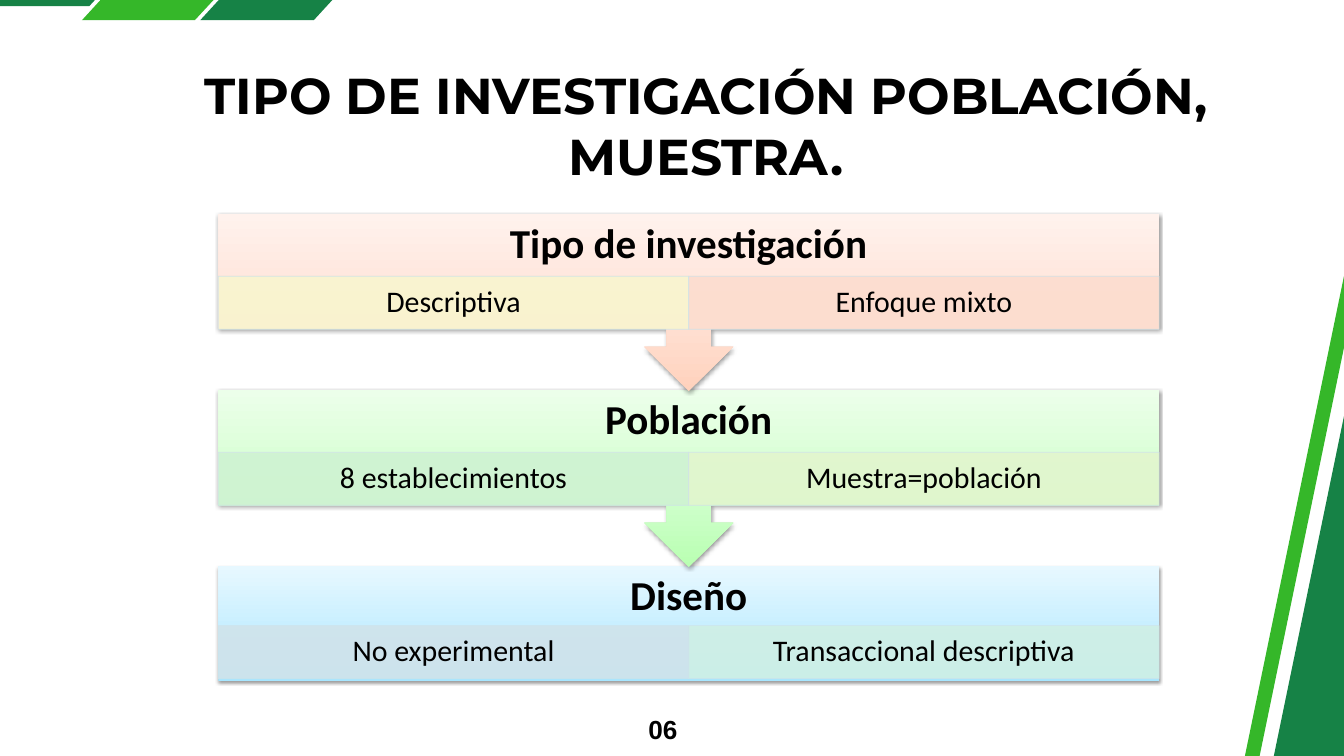
"""Build the slide on research type, population and design."""
from dataclasses import dataclass

from pptx import Presentation
from pptx.dml.color import RGBColor
from pptx.enum.shapes import MSO_SHAPE
from pptx.enum.text import MSO_ANCHOR, MSO_AUTO_SIZE, PP_ALIGN
from pptx.oxml import parse_xml
from pptx.oxml.ns import nsdecls
from pptx.util import Emu, Pt

PX = 9144
LEFT, WIDE, TOP, STEP = 325, 1400, 318, 262
HEAD, LOW = 93, 79
HUES = {"ink": "000000", "dark": "168246", "lime": "35B729", "edge": "D0E3EA"}
TITLE = {"name": "Montserrat", "size": Pt(54), "bold": True}
PAGE = {"name": "Arial", "size": Pt(28), "bold": True}
BAND = {"name": "Calibri", "size": Pt(44), "bold": True}
CELL = {"name": "Calibri", "size": Pt(32), "bold": False}


@dataclass(frozen=True)
class Box:
    """A place on the slide in px."""
    x: int
    y: int
    w: int
    h: int

    def emu(self) -> list[Emu]:
        """Return the four lengths in EMU."""
        return [Emu(v * PX) for v in (self.x, self.y, self.w, self.h)]


@dataclass(frozen=True)
class Stripe:
    """A slanted green band at the slide edge."""
    hue: str
    points: tuple


@dataclass(frozen=True)
class Stage:
    """A header with two cells below it."""
    head: str
    tones: tuple
    cells: tuple
    form: MSO_SHAPE = MSO_SHAPE.UP_ARROW_CALLOUT
    turn: int = 180
    high: int = 264
    drop: int = HEAD


STRIPES = (
    Stripe("dark", ((-179, -83), (217, -83), (133, 9), (-263, 9))),
    Stripe("lime", ((244, -103), (413, -103), (290, 30), (122, 30))),
    Stripe("dark", ((420, -103), (589, -103), (467, 30), (298, 30))),
    Stripe("dark", ((1813, 1525), (2145, -83), (2601, 12), (2269, 1619))),
    Stripe("lime", ((1770, 1525), (2102, -83), (2123, -78), (1791, 1529))),
)
STAGES = (
    Stage("Tipo de investigación", ("FFD2BD", "FFDED0", "FFF2ED"),
          (("Descriptiva", "F9F5CF"), ("Enfoque mixto", "FCDDCF"))),
    Stage("Población", ("B9FFB2", "CDFFC9", "ECFFEA"),
          (("8 establecimientos", "CFF2D2"), ("Muestra=población", "E2F6CE"))),
    Stage("Diseño", ("A7E6FF", "C1EDFF", "E7F8FF"),
          (("No experimental", "D0E3EA"), ("Transaccional descriptiva", "CFEFE5")),
          MSO_SHAPE.RECTANGLE, 0, 172, 89),
)


def tint(fill, hue: str) -> None:
    """Give a fill one solid colour."""
    fill.solid()
    fill.fore_color.rgb = RGBColor.from_string(hue)


def fade(fill) -> None:
    """Make a solid fill 90 percent opaque."""
    node = fill._xPr.find(".//{*}srgbClr")
    node.append(parse_xml(f'<a:alpha {nsdecls("a")} val="90000"/>'))


def write(shape, text: str, font: dict, frame: dict, pad=(0, 0), **para) -> None:
    """Put one styled paragraph into a shape."""
    body = shape.text_frame
    side, edge = (Emu(v * PX) for v in pad)
    looks = {"word_wrap": True, "margin_left": side, "margin_right": side,
             "margin_top": edge, "margin_bottom": edge, **frame}
    line = body.paragraphs[0]
    run = line.add_run()
    run.text = text
    for goal, values in ((body, looks), (line, para), (run.font, font)):
        for key, value in values.items():
            setattr(goal, key, value)
    run.font.color.rgb = RGBColor.from_string(HUES["ink"])


def draw_stripe(shapes, stripe: Stripe) -> None:
    """Draw one slanted band."""
    first, *rest = stripe.points
    pen = shapes.build_freeform(*first, scale=PX)
    pen.add_line_segments(rest, close=True)
    shape = pen.convert_to_shape()
    shape.shadow.inherit = False
    tint(shape.fill, HUES[stripe.hue])
    shape.line.fill.background()


def draw_base(shapes, stage: Stage, y: int) -> None:
    """Draw the graded, shaded back of a stage."""
    shape = shapes.add_shape(stage.form, *Box(LEFT, y, WIDE, stage.high).emu())
    shape.rotation = stage.turn
    shape.line.fill.background()
    shape.shadow.inherit = False
    stops = "".join(
        f'<a:gs pos="{pos}"><a:srgbClr val="{hue}"/></a:gs>'
        for pos, hue in zip((0, 35000, 100000), stage.tones))
    props = shape._element.spPr
    props.insert(2, parse_xml(
        f'<a:gradFill {nsdecls("a")} rotWithShape="0"><a:gsLst>{stops}</a:gsLst>'
        '<a:lin ang="16200000" scaled="0"/></a:gradFill>'))
    props.find("{*}effectLst").append(parse_xml(
        f'<a:outerShdw {nsdecls("a")} blurRad="40000" dist="20000" dir="5400000" '
        f'rotWithShape="0"><a:srgbClr val="{HUES["ink"]}"><a:alpha val="38000"/>'
        '</a:srgbClr></a:outerShdw>'))


def draw_stage(shapes, stage: Stage, y: int) -> None:
    """Draw a header and its row of cells."""
    draw_base(shapes, stage, y)
    mid = {"vertical_anchor": MSO_ANCHOR.MIDDLE}
    para = {"alignment": PP_ALIGN.CENTER, "line_spacing": 0.9}
    head = shapes.add_textbox(*Box(LEFT, y, WIDE, HEAD).emu())
    write(head, stage.head, BAND, mid, (34, 34), **para)
    half = WIDE // len(stage.cells)
    for col, (text, hue) in enumerate(stage.cells):
        place = Box(LEFT + col * half, y + stage.drop, half, LOW)
        cell = shapes.add_shape(MSO_SHAPE.RECTANGLE, *place.emu())
        cell.shadow.inherit = False
        cell.line.width = Pt(0.75)
        for fill, tone in ((cell.fill, hue), (cell.line.fill, HUES["edge"])):
            tint(fill, tone)
            fade(fill)
        write(cell, text, CELL, mid, (25, 4), **para)


def main() -> None:
    """Build and save the slide."""
    deck = Presentation()
    deck.slide_width, deck.slide_height = Emu(2000 * PX), Emu(1125 * PX)
    shapes = deck.slides.add_slide(deck.slide_layouts[6]).shapes
    for stripe in STRIPES:
        draw_stripe(shapes, stripe)
    grow = {"auto_size": MSO_AUTO_SIZE.SHAPE_TO_FIT_TEXT}
    title = shapes.add_textbox(*Box(292, 96, 1517, 182).emu())
    write(title, "TIPO DE INVESTIGACIÓN POBLACIÓN, MUESTRA.", TITLE, grow,
          alignment=PP_ALIGN.CENTER)
    page = shapes.add_textbox(*Box(952, 1054, 56, 50).emu())
    write(page, "06", PAGE, grow, alignment=PP_ALIGN.RIGHT, line_spacing=Pt(39.2))
    for row, stage in reversed(list(enumerate(STAGES))):
        draw_stage(shapes, stage, TOP + row * STEP)
    deck.save("out.pptx")


if __name__ == "__main__":
    main()
